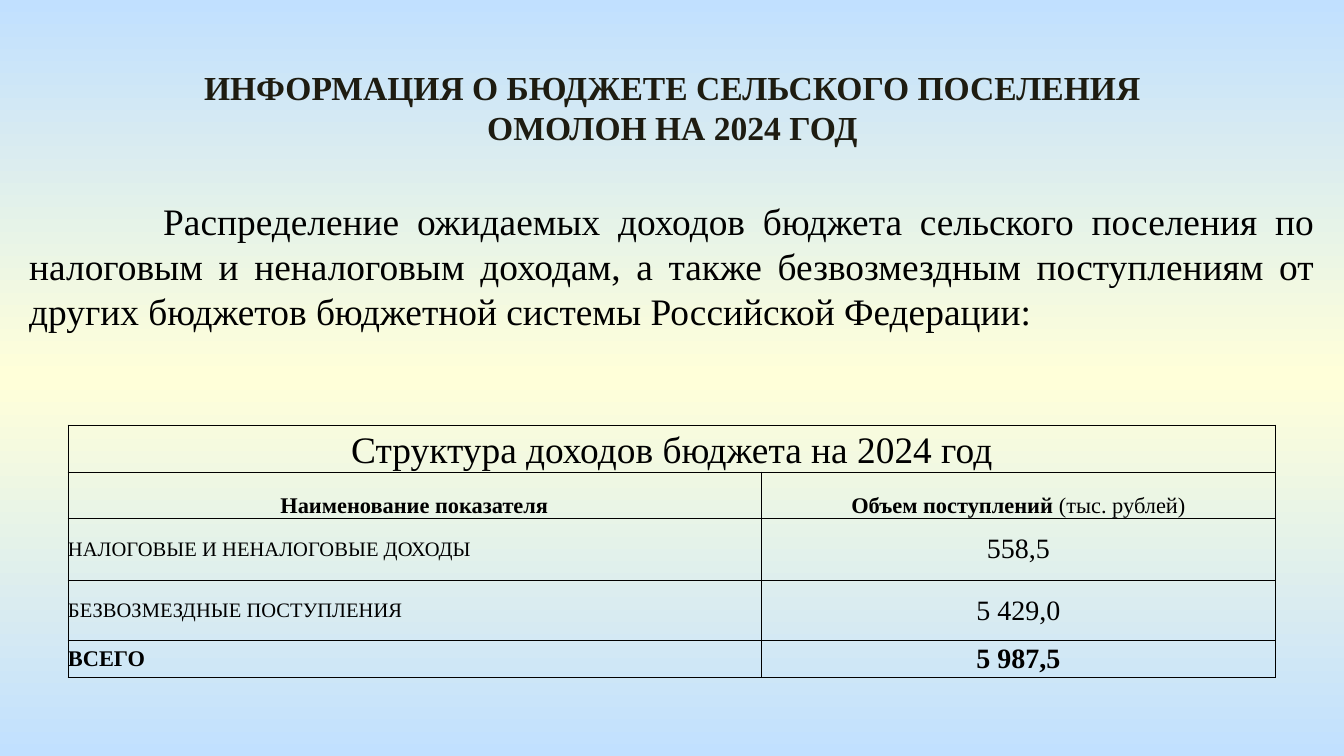
from copy import deepcopy

from pptx import Presentation
from pptx.dml.color import RGBColor
from pptx.enum.shapes import MSO_SHAPE
from pptx.enum.text import MSO_ANCHOR, MSO_AUTO_SIZE, PP_ALIGN
from pptx.oxml import parse_xml
from pptx.oxml.ns import nsdecls, qn
from pptx.util import Pt

# Content
TITLE = "ИНФОРМАЦИЯ О БЮДЖЕТЕ СЕЛЬСКОГО ПОСЕЛЕНИЯ ОМОЛОН НА 2024 ГОД"
INTRO = ("Распределение ожидаемых доходов бюджета сельского поселения по "
         "налоговым и неналоговым доходам, а также безвозмездным поступлениям "
         "от других бюджетов бюджетной системы Российской Федерации:")
# Each row: height in px, anchor, cells; each cell: runs of (text, size, bold)
BOTTOM, MIDDLE = MSO_ANCHOR.BOTTOM, MSO_ANCHOR.MIDDLE
ROWS = [
    (47, BOTTOM, [[("Структура доходов бюджета на 2024 год", 20, False)], []]),
    (46, BOTTOM, [[("Наименование показателя", 12, True)],
                  [("Объем поступлений ", 12, True), ("(тыс. рублей)", 12, False)]]),
    (63, MIDDLE, [[("НАЛОГОВЫЕ И НЕНАЛОГОВЫЕ ДОХОДЫ", 11, False)], [("558,5", 15, False)]]),
    (60, MIDDLE, [[("БЕЗВОЗМЕЗДНЫЕ ПОСТУПЛЕНИЯ", 11, False)], [("5 429,0", 15, False)]]),
    (37, MIDDLE, [[("ВСЕГО", 12, True)], [("5 987,5", 15, True)]]),
]
HEADING_ROWS = 2
COLUMNS = [693, 515]

# Layout in px
SLIDE = (1344, 756)
TITLE_BOX = (153, 60, 1039, 96)
INTRO_BOX = (16, 192, 1312, 149)
TABLE_ORIGIN = (68, 425)
INTRO_INDENT = 134

FONT = "Times New Roman"
BLACK = RGBColor(0x00, 0x00, 0x00)
TITLE_COLOR = RGBColor(0x1E, 0x1C, 0x11)
SKY = RGBColor(0xC1, 0xE0, 0xFF)
CREAM = RGBColor(0xFF, 0xFF, 0xD9)


def px(length):
    return round(length * 914400 / 134.4)


def add_span(para, text, size, bold=False, color=BLACK):
    span = para.add_run()
    span.text = text
    span.font.name = FONT
    span.font.size = Pt(size)
    span.font.bold = bold
    span.font.color.rgb = color


def prepare(box, place, align):
    box.left, box.top, box.width, box.height = map(px, place)
    frame = box.text_frame
    frame.word_wrap = True
    frame.auto_size = MSO_AUTO_SIZE.NONE
    frame.vertical_anchor = MSO_ANCHOR.TOP
    para = frame.paragraphs[0]
    para.alignment = align
    return para


def paint_background(page):
    fill = page.background.fill
    fill.gradient()
    fill.gradient_angle = 90
    stops = page.element.find(".//" + qn("a:gsLst"))
    stops.append(deepcopy(stops[0]))
    for stop, position, color in zip(fill.gradient_stops, (0, 0.5, 1), (SKY, CREAM, SKY)):
        stop.position = position
        stop.color.rgb = color


def add_intro(page):
    box = page.shapes.add_shape(MSO_SHAPE.RECTANGLE, *map(px, INTRO_BOX))
    box.shadow.inherit = False
    box.line.fill.background()
    # The panel takes the slide's own background as its fill
    box._element.set("useBgFill", "1")
    para = prepare(box, INTRO_BOX, PP_ALIGN.JUSTIFY)
    para._p.get_or_add_pPr().set("indent", str(px(INTRO_INDENT)))
    add_span(para, INTRO, 20)


def add_borders(cell):
    properties = cell._tc.get_or_add_tcPr()
    for index, side in enumerate("LRTB"):
        properties.insert(index, parse_xml(
            f'<a:ln{side} {nsdecls("a")} w="{Pt(0.5)}"><a:solidFill>'
            f'<a:srgbClr val="{BLACK}"/></a:solidFill></a:ln{side}>'))


def add_income_table(page):
    heights = [row[0] for row in ROWS]
    size = (sum(COLUMNS), sum(heights))
    table = page.shapes.add_table(len(ROWS), len(COLUMNS),
                                  *map(px, TABLE_ORIGIN + size)).table
    table.first_row = table.horz_banding = False
    for column, width in zip(table.columns, COLUMNS):
        column.width = px(width)
    for r, (height, anchor, cells) in enumerate(ROWS):
        table.rows[r].height = px(height)
        for c, spans in enumerate(cells):
            cell = table.cell(r, c)
            cell.margin_left = cell.margin_right = cell.margin_top = cell.margin_bottom = 0
            cell.vertical_anchor = anchor
            cell.fill.background()
            add_borders(cell)
            para = cell.text_frame.paragraphs[0]
            centred = c > 0 or r < HEADING_ROWS
            para.alignment = PP_ALIGN.CENTER if centred else PP_ALIGN.LEFT
            for span in spans:
                add_span(para, *span)
    table.cell(0, 0).merge(table.cell(0, 1))


def main():
    deck = Presentation()
    deck.slide_width, deck.slide_height = map(px, SLIDE)
    page = deck.slides.add_slide(deck.slide_layouts[5])
    paint_background(page)

    # Introduction with an indented first line
    add_intro(page)

    # Title
    para = prepare(page.shapes.title, TITLE_BOX, PP_ALIGN.CENTER)
    add_span(para, TITLE, 18, True, TITLE_COLOR)

    # Income table
    add_income_table(page)
    deck.save("out.pptx")


if __name__ == "__main__":
    main()
